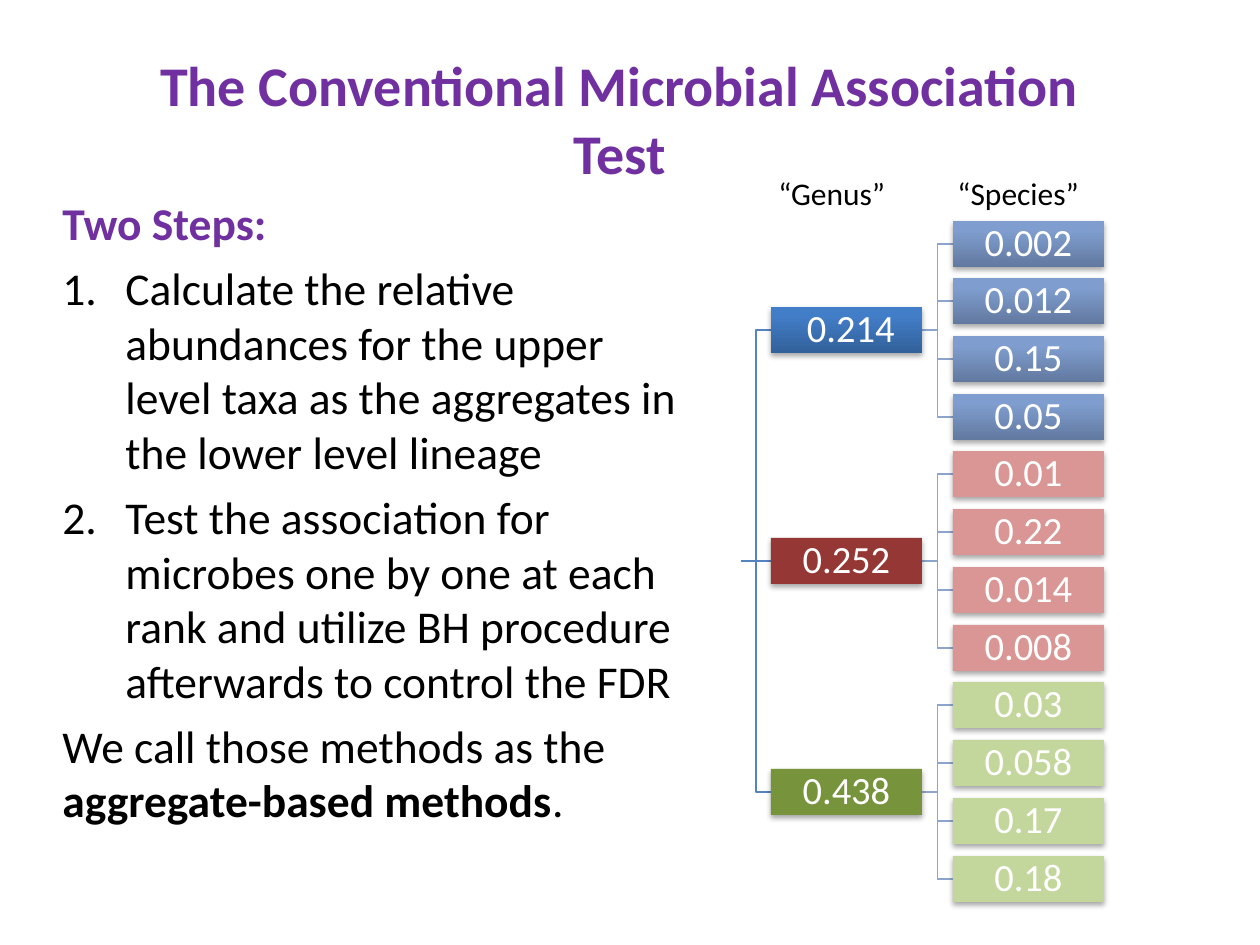
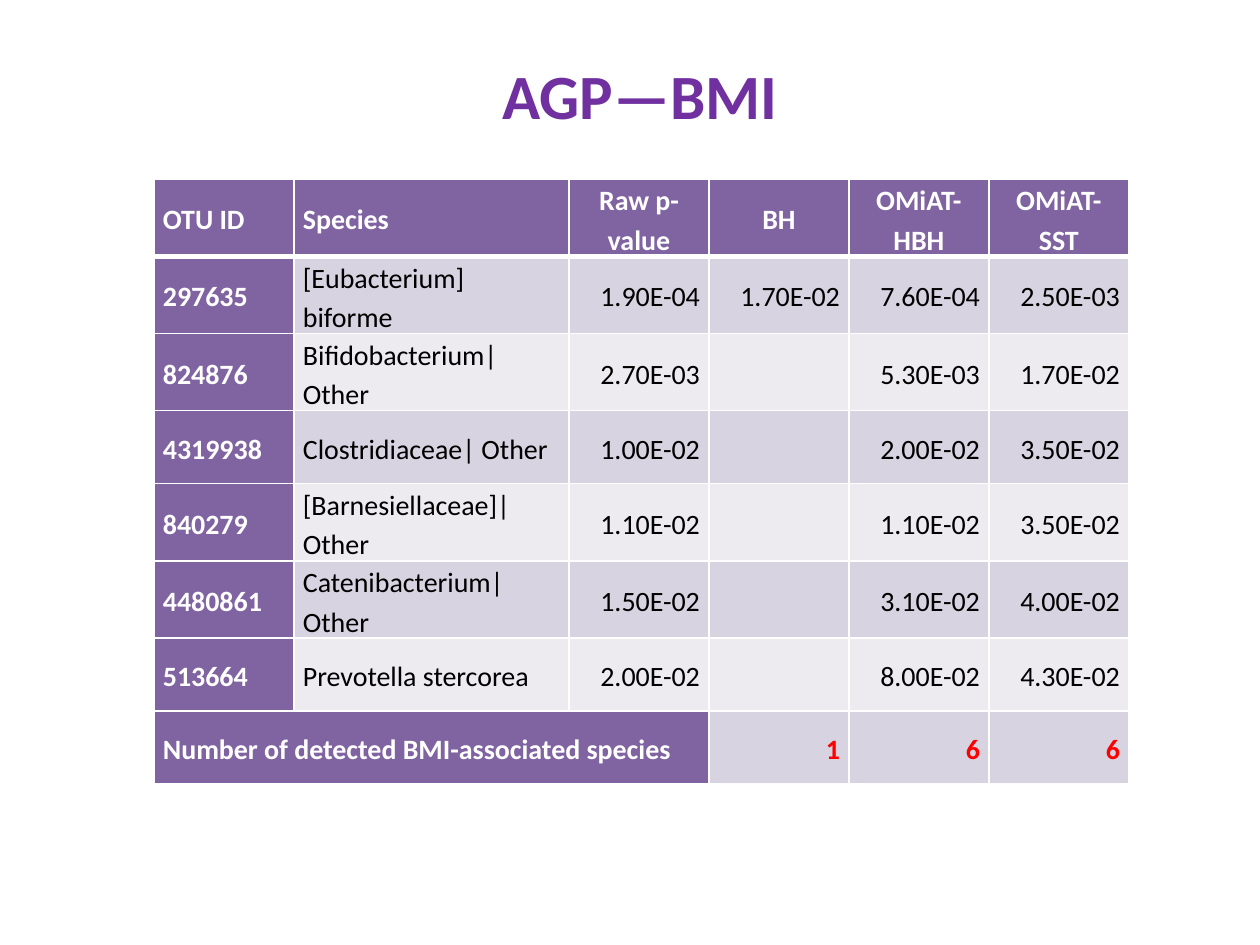
from dataclasses import dataclass

from lxml.etree import SubElement
from pptx import Presentation
from pptx.dml.color import RGBColor as Rgb
from pptx.enum.shapes import MSO_CONNECTOR as Link, MSO_SHAPE as Shape
from pptx.enum.text import MSO_ANCHOR as Anchor, PP_ALIGN as Align
from pptx.oxml import parse_xml
from pptx.oxml.ns import nsdecls, qn
from pptx.util import Emu, Pt


@dataclass(frozen=True)
class Theme:
    font: str = "Calibri"
    title: str = "7030A0"
    ink: str = "000000"
    white: str = "FFFFFF"
    alert: str = "FF0000"
    header: str = "8064A2"
    band_dark: str = "D8D3E0"
    band_light: str = "EDEAF0"
    root_line: str = "5483BE"
    branch_line: str = "8DA5CC"
    title_size: int = 32
    big_title_size: int = 36
    body_size: int = 26
    node_size: int = 22
    label_size: int = 18
    table_size: int = 16


THEME = Theme()
SCALE = 914400 / 126


def px(*lengths):
    return [Emu(round(length * SCALE)) for length in lengths]


def write(frame, text, size, color=THEME.ink, bold=False, align=Align.LEFT, anchor=Anchor.TOP,
          spacing=None, after=0, insets=None, indent=None, numbered=False, joined=False):
    frame.word_wrap = True
    frame.vertical_anchor = anchor
    if insets:
        frame.margin_left, frame.margin_top, frame.margin_right, frame.margin_bottom = px(*insets)
    para = frame.paragraphs[-1]
    if para.runs and not joined:
        para = frame.add_paragraph()
    if not joined:
        para.alignment = align
        para.line_spacing = spacing
        para.space_after = Pt(after)
        if indent:
            left, first = px(*indent)
            props = para._p.get_or_add_pPr()
            props.set("marL", str(left))
            props.set("indent", str(first))
            if numbered:
                SubElement(props, qn("a:buAutoNum"), type="arabicPeriod")
    run = para.add_run()
    run.text = text
    run.font.name = THEME.font
    run.font.size = Pt(size)
    run.font.bold = bold
    run.font.color.rgb = Rgb.from_string(color)


deck = Presentation()
deck.slide_width, deck.slide_height = px(1260, 945)
blank = deck.slide_layouts[6]
steps, results = deck.slides.add_slide(blank), deck.slides.add_slide(blank)

for slide, heading, size, place in (
    (steps, "The Conventional Microbial Association Test", THEME.title_size, (126, 39, 987, 158)),
    (results, "AGP—BMI", THEME.big_title_size, (199, 42, 882, 105)),
):
    write(slide.shapes.add_textbox(*px(*place)).text_frame, heading, size, THEME.title,
          bold=True, align=Align.CENTER, anchor=Anchor.MIDDLE)

body = steps.shapes.add_textbox(*px(42, 189, 662, 672)).text_frame
plain = dict(size=THEME.body_size, after=6, indent=(8, 0))
step = plain | dict(indent=(71, -63), numbered=True)
write(body, "Two Steps:", color=THEME.title, bold=True, **plain)
write(body, "Calculate the relative abundances for the upper level taxa as the aggregates "
            "in the lower level lineage", **step)
write(body, "Test the association for microbes one by one at each rank and utilize BH procedure "
            "afterwards to control the FDR", **step)
write(body, "We call those methods as the ", **plain)
write(body, "aggregate-based methods", THEME.body_size, bold=True, joined=True)
write(body, ".", THEME.body_size, joined=True)

for rank, left in (("“Species”", 945), ("“Genus”", 766)):
    write(steps.shapes.add_textbox(*px(left, 168, 158, 50)).text_frame, rank, THEME.label_size)

lineages = (
    (" 0.214", ("32619A", "427DC7"), ("0.002", "0.012", "0.15", "0.05"), ("6279A0", "7F9ECF")),
    ("0.252", ("953735",), ("0.01", "0.22", "0.014", "0.008"), ("D99694",)),
    ("0.438", ("77933C",), ("0.03", "0.058", "0.17", "0.18"), ("C3D69B",)),
)
NODE_W, NODE_H = 151, 46
ROOT_X, GENUS_X, SPECIES_X = 741, 771, 953
FIRST_Y, LAST_Y = 221, 856
species_y = [FIRST_Y + (LAST_Y - FIRST_Y) * row // 11 for row in range(12)]

nodes, links = [], []
for group, (genus, genus_fill, species, species_fill) in enumerate(lineages):
    rows = species_y[group * 4:group * 4 + 4]
    genus_y = (rows[0] + rows[-1]) // 2
    root_y = (FIRST_Y + LAST_Y) // 2
    nodes.append((genus, GENUS_X, genus_y, genus_fill))
    links.append((ROOT_X, root_y, GENUS_X, genus_y, THEME.root_line))
    for abundance, y in zip(species, rows):
        nodes.append((abundance, SPECIES_X, y, species_fill))
        links.append((GENUS_X + NODE_W, genus_y, SPECIES_X, y, THEME.branch_line))

for x1, y1, x2, y2, color in links:
    bend = Link.STRAIGHT if abs(y1 - y2) < 2 else Link.ELBOW
    branch = steps.shapes.add_connector(bend, *px(x1, y1 + NODE_H // 2, x2, y2 + NODE_H // 2))
    branch.line.color.rgb = Rgb.from_string(color)
    branch.line.width = Pt(0.75)
    SubElement(branch._element.spPr, qn("a:effectLst"))

for abundance, x, y, colors in nodes:
    node = steps.shapes.add_shape(Shape.RECTANGLE, *px(x, y, NODE_W, NODE_H))
    if len(colors) == 2:
        node.fill.gradient()
        node.fill.gradient_angle = 90
        for stop, color, position in zip(node.fill.gradient_stops, colors, (0, 0.8)):
            stop.color.rgb = Rgb.from_string(color)
            stop.position = position
    else:
        node.fill.solid()
        node.fill.fore_color.rgb = Rgb.from_string(colors[0])
    node.line.fill.background()
    node.shadow.inherit = False
    effects = node._element.spPr.find(qn("a:effectLst"))
    effects.append(parse_xml(
        f'<a:outerShdw {nsdecls("a")} blurRad="40000" dist="23000" dir="5400000" rotWithShape="0">'
        '<a:srgbClr val="000000"><a:alpha val="35000"/></a:srgbClr></a:outerShdw>'))
    write(node.text_frame, abundance, THEME.node_size, THEME.white, align=Align.CENTER,
          anchor=Anchor.MIDDLE, spacing=0.9, insets=(3, 3, 3, 3))

detections = (
    ("OTU ID", "Species", "Raw p-value", "BH", "OMiAT-HBH", "OMiAT-SST"),
    ("297635", "[Eubacterium] biforme", "1.90E-04", "1.70E-02", "7.60E-04", "2.50E-03"),
    ("824876", "Bifidobacterium| Other", "2.70E-03", "", "5.30E-03", "1.70E-02"),
    ("4319938", "Clostridiaceae| Other", "1.00E-02", "", "2.00E-02", "3.50E-02"),
    ("840279", "[Barnesiellaceae]|Other", "1.10E-02", "", "1.10E-02", "3.50E-02"),
    ("4480861", "Catenibacterium| Other", "1.50E-02", "", "3.10E-02", "4.00E-02"),
    ("513664", "Prevotella stercorea", "2.00E-02", "", "8.00E-02", "4.30E-02"),
    ("Number of detected BMI-associated species", "", "", "1", "6", "6"),
)
widths = (140, 275, 140, 140, 140, 140)
total_row = len(detections) - 1
table = results.shapes.add_table(
    len(detections), len(widths), *px(154, 179, sum(widths), 73 * len(detections))).table
table.first_row = table.horz_banding = False
for column, width in zip(table.columns, px(*widths)):
    column.width = width
table.cell(total_row, 0).merge(table.cell(total_row, 2))

for r, row in enumerate(detections):
    for c, value in enumerate(row):
        cell = table.cell(r, c)
        props = cell._tc.get_or_add_tcPr()
        for side in ("L", "R", "T", "B"):
            thick = (r, side) in ((0, "B"), (1, "T"))
            props.append(parse_xml(
                f'<a:ln{side} {nsdecls("a")} w="{Pt(3 if thick else 1)}"><a:solidFill>'
                f'<a:srgbClr val="{THEME.white}"/></a:solidFill></a:ln{side}>'))
        heading = r == 0 or c == 0
        band = THEME.band_dark if r % 2 else THEME.band_light
        cell.fill.solid()
        cell.fill.fore_color.rgb = Rgb.from_string(THEME.header if heading else band)
        cell.vertical_anchor = Anchor.MIDDLE
        cell.margin_left, cell.margin_top, cell.margin_right, cell.margin_bottom = px(9, 0, 9, 0)
        if value:
            color = THEME.white if heading else THEME.alert if r == total_row else THEME.ink
            align = Align.LEFT if c < 2 else Align.CENTER if r == 0 else Align.RIGHT
            write(cell.text_frame, value, THEME.table_size, color, align=align, spacing=1.15,
                  bold=heading or r == total_row, anchor=Anchor.MIDDLE)

deck.save("out.pptx")
